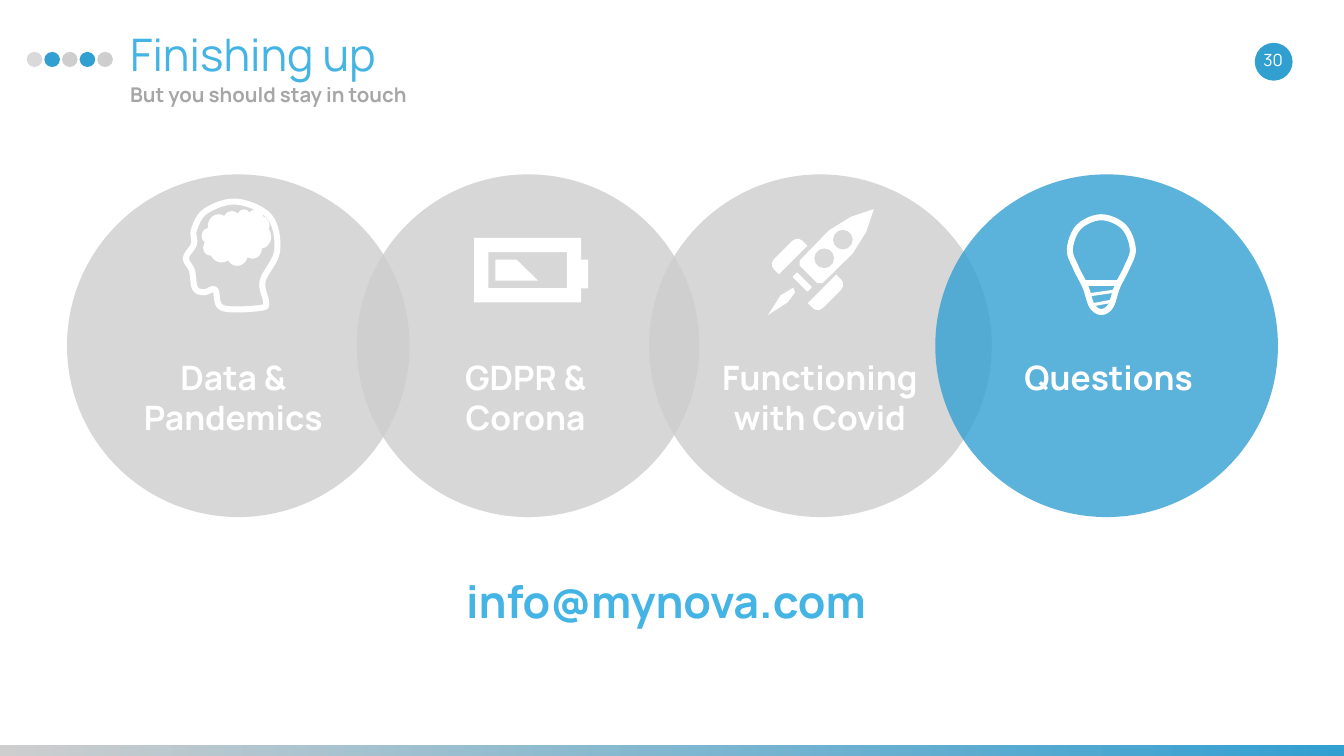
from dataclasses import dataclass

import pptx
import pptx.dml.color
import pptx.enum.shapes
import pptx.enum.text
import pptx.oxml
import pptx.oxml.ns
import pptx.util

Inches = pptx.util.Inches
Align = pptx.enum.text.PP_ALIGN
Anchor = pptx.enum.text.MSO_ANCHOR
Shape = pptx.enum.shapes.MSO_SHAPE


@dataclass(frozen=True)
class Theme:
    font: str = "Manrope"
    blue: str = "329FD1"
    bright_blue: str = "43B4E3"
    grey: str = "CECECE"
    pale_grey: str = "D9D9D9"
    text_grey: str = "A6A6A6"
    white: str = "FFFFFF"
    title_size: int = 64
    label_size: int = 48
    subtitle_size: int = 29
    number_size: int = 24
    icon_stroke: float = 8.6
    thread_stroke: float = 4.5


THEME = Theme()


def rgb(color):
    return pptx.dml.color.RGBColor.from_string(color)


def paint(shape, color, opacity=100):
    shape.shadow.inherit = False
    shape.line.fill.background()
    shape.fill.solid()
    shape.fill.fore_color.rgb = rgb(color)
    if opacity < 100:
        color_element = shape.fill._xPr.find(".//" + pptx.oxml.ns.qn("a:srgbClr"))
        alpha = pptx.oxml.parse_xml(
            f'<a:alpha {pptx.oxml.ns.nsdecls("a")} val="{opacity * 1000}"/>')
        color_element.append(alpha)


def stroke(line, width):
    line.color.rgb = rgb(THEME.white)
    line.width = pptx.util.Pt(width)


def add_preset(slide, kind, box, color=THEME.white, opacity=100, rotation=0):
    shape = slide.shapes.add_shape(kind, *map(Inches, box))
    paint(shape, color, opacity)
    shape.rotation = rotation
    return shape


def add_text(slide, box, text, size, color, bold=False, align=Align.LEFT, anchor=Anchor.TOP):
    text_frame = slide.shapes.add_textbox(*map(Inches, box)).text_frame
    text_frame.word_wrap = True
    text_frame.vertical_anchor = anchor
    text_frame.margin_left = text_frame.margin_right = Inches(0.27)
    text_frame.margin_top = text_frame.margin_bottom = Inches(0.13)
    text_frame.text = text
    paragraph = text_frame.paragraphs[0]
    paragraph.alignment = align
    font = paragraph.runs[0].font
    font.name, font.size, font.bold = THEME.font, pptx.util.Pt(size), bold
    font.color.rgb = rgb(color)


def smooth(points, steps=6):
    curve = []
    for index, start in enumerate(points):
        before = points[index - 1]
        end = points[(index + 1) % len(points)]
        after = points[(index + 2) % len(points)]
        for step in range(steps):
            t = step / steps
            curve.append(tuple(
                b + t * (c - a) / 2 + t**2 * (2 * a - 5 * b + 4 * c - d) / 2
                + t**3 * (3 * b - a - 3 * c + d) / 2
                for a, b, c, d in zip(before, start, end, after)))
    return curve


def add_outline(slide, left, top, points):
    corners = [(Inches(left + x), Inches(top + y)) for x, y in points]
    builder = slide.shapes.build_freeform(*corners[0], scale=1.0)
    builder.add_line_segments(corners[1:], close=True)
    shape = builder.convert_to_shape()
    paint(shape, THEME.white)
    return shape


def add_stroked_outline(slide, left, top, points):
    shape = add_outline(slide, left, top, smooth(points))
    shape.fill.background()
    stroke(shape.line, THEME.icon_stroke)


def add_stroke(slide, left, top, start, end, width):
    ends = [Inches(offset + value) for point in (start, end)
            for offset, value in zip((left, top), point)]
    connector = slide.shapes.add_connector(pptx.enum.shapes.MSO_CONNECTOR.STRAIGHT, *ends)
    stroke(connector.line, width)
    connector._element.spPr.append(
        pptx.oxml.parse_xml(f'<a:effectLst {pptx.oxml.ns.nsdecls("a")}/>'))


def add_head(slide, left, top):
    profile = [(1.06, 0.06), (0.45, 0.25), (0.22, 0.62), (0.22, 0.9), (0.06, 1.18),
               (0.18, 1.43), (0.24, 1.78), (0.42, 1.86), (0.64, 1.81), (0.78, 2.17),
               (1.54, 2.17), (1.65, 2.05), (1.58, 1.64), (1.87, 1.04), (1.72, 0.36)]
    add_stroked_outline(slide, left, top, profile)
    add_preset(slide, Shape.CLOUD, (left + 0.37, top + 0.21, 1.38, 1.12))


def add_battery(slide, left, top):
    case = add_preset(slide, Shape.FRAME, (left, top, 2.12, 1.28))
    case.adjustments[0] = 0.22
    add_preset(slide, Shape.RECTANGLE, (left + 2.12, top + 0.43, 0.14, 0.57))
    charge = [(0, 0), (0.42, 0), (0.85, 0.42), (0, 0.42)]
    add_outline(slide, left + 0.42, top + 0.43, charge)


def add_rocket(slide, left, top):
    body = [(2.1, 0), (1.65, 0.15), (1.21, 0.42), (0.63, 1.02), (0.63, 1.12), (0.98, 1.47),
            (1.08, 1.47), (1.68, 0.88), (1.95, 0.45)]
    add_outline(slide, left, top, body)
    for x, y in ((0.92, 0.78), (1.29, 0.41)):
        add_preset(slide, Shape.OVAL, (left + x, top + y, 0.39, 0.39), THEME.pale_grey)
    for x, y in ((0, 0.77), (0.77, 1.54)):
        fin = add_preset(slide, Shape.ROUND_2_SAME_RECTANGLE,
                         (left + x, top + y, 0.8, 0.28), rotation=-45 if x == 0 else 135)
        fin.adjustments[0] = 0.5
    add_preset(slide, Shape.ROUNDED_RECTANGLE, (left + 0.47, top + 1.38, 0.42, 0.13),
               rotation=45)
    flame = [(0, 2.1), (0.25, 1.71), (0.5, 1.56), (0.54, 1.65), (0.39, 1.85)]
    add_outline(slide, left, top, flame)


def add_bulb(slide, left, top):
    width = 1.37
    side = [(0.24, 0.25), (0.06, 0.69), (0.18, 1.06), (0.37, 1.44), (0.5, 1.82)]
    mirrored = [(width - x, y) for x, y in reversed(side)]
    outline = [(width / 2, 0.06), *side, (width / 2, 1.94), *mirrored]
    add_stroked_outline(slide, left, top, outline)
    add_stroke(slide, left, top, (0.34, 1.37), (width - 0.34, 1.37), THEME.icon_stroke)
    for inset, y in ((0.44, 1.6), (0.5, 1.8)):
        add_stroke(slide, left, top, (inset, y), (width - inset, y - 0.07),
                   THEME.thread_stroke)


def add_header(slide, left, top, width):
    dot_colors = [THEME.pale_grey, THEME.blue, THEME.grey, THEME.blue, THEME.grey]
    for index, color in enumerate(dot_colors):
        add_preset(slide, Shape.OVAL, (left + index * 0.35, top + 0.62, 0.31, 0.3), color)
    text_left = left + 1.78
    add_text(slide, (text_left, top, 21.25, 1.6), "Finishing up",
             THEME.title_size, THEME.bright_blue)
    add_text(slide, (text_left, top + 1.09, 21.25, 0.85), "But you should stay in touch",
             THEME.subtitle_size, THEME.text_grey, bold=True)
    right = left + width
    add_preset(slide, Shape.OVAL, (right - 0.75, top + 0.44, 0.75, 0.75), THEME.blue)
    add_text(slide, (right - 0.97, top + 0.37, 1.17, 0.8), "30", THEME.number_size,
             THEME.white, align=Align.CENTER, anchor=Anchor.MIDDLE)


def add_topics(slide, top, diameter):
    topics = [
        (1.33, THEME.grey, "Data & Pandemics", 0.83, add_head, 2.3, 0.48),
        (7.08, THEME.grey, "GDPR & Corona", 0.88, add_battery, 2.33, 1.26),
        (12.88, THEME.grey, "Functioning with Covid", 0.92, add_rocket, 2.36, 0.69),
        (18.56, THEME.blue, "Questions", 0.97, add_bulb, 2.61, 0.79),
    ]
    for left, color, *_ in topics:
        add_preset(slide, Shape.OVAL, (left, top, diameter, diameter), color, opacity=80)
    for left, _, label, label_x, add_icon, icon_x, icon_y in topics:
        add_icon(slide, left + icon_x, top + icon_y)
        add_text(slide, (left + label_x, top + 3.49, 4.94, 1.88), label,
                 THEME.label_size, THEME.white, bold=True, align=Align.CENTER)


def add_footer_bar(slide, box):
    bar = add_preset(slide, Shape.RECTANGLE, box, THEME.grey)
    bar.fill.gradient()
    bar.fill.gradient_angle = 0
    for stop, color in zip(bar.fill.gradient_stops, (THEME.grey, THEME.blue)):
        stop.color.rgb = rgb(color)


def main():
    presentation = pptx.Presentation()
    presentation.slide_width, presentation.slide_height = Inches(26.67), Inches(15)
    slide = presentation.slides.add_slide(presentation.slide_layouts[6])
    add_footer_bar(slide, (0, 14.79, 26.67, 0.21))
    add_header(slide, left=0.53, top=0.41, width=25.12)
    add_topics(slide, top=3.46, diameter=6.8)
    add_text(slide, (2.59, 11.25, 21.25, 1.6), "info@mynova.com", THEME.title_size,
             THEME.bright_blue, bold=True, align=Align.CENTER)
    presentation.save("out.pptx")


if __name__ == "__main__":
    main()
